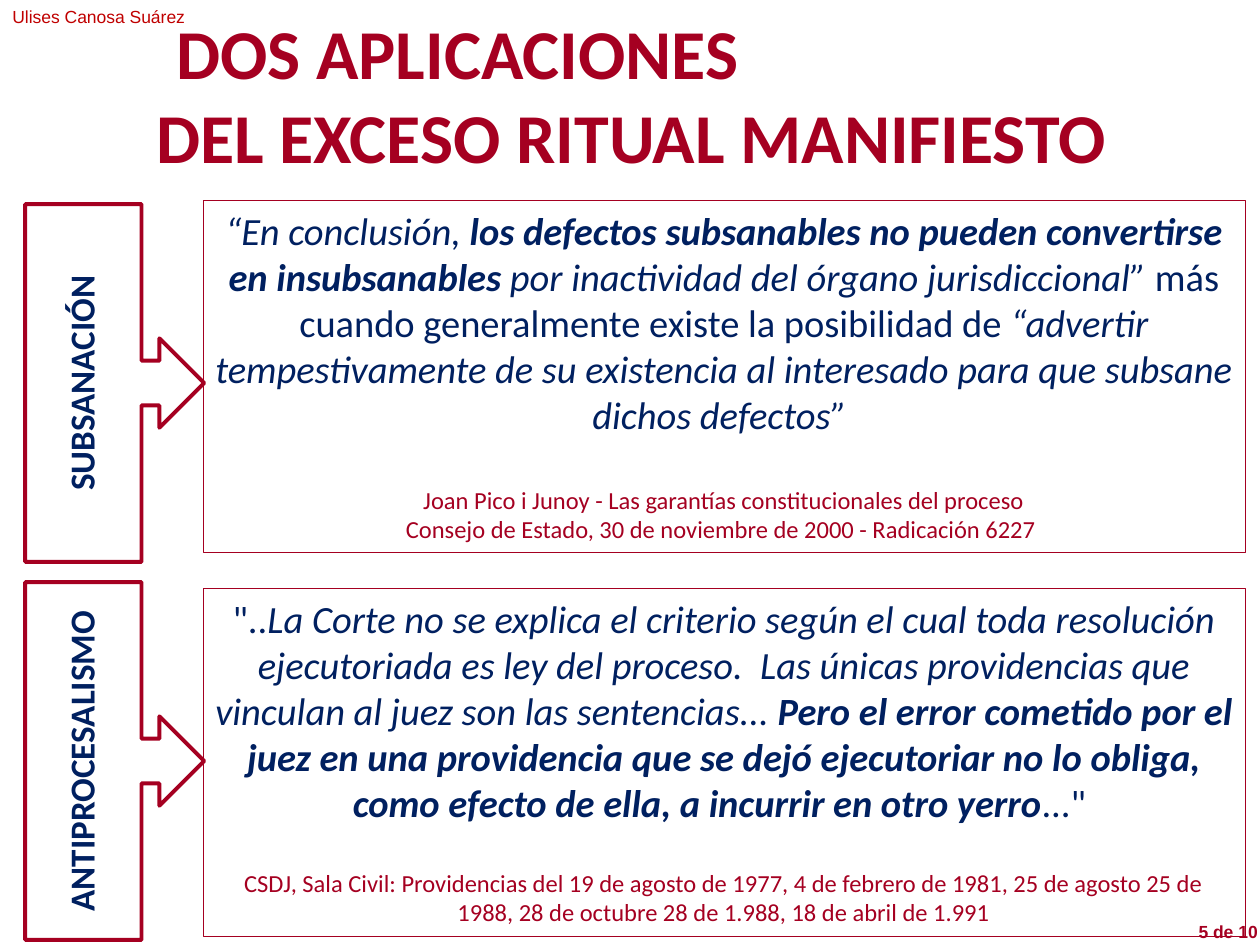
from pptx import Presentation
from pptx.dml.color import RGBColor
from pptx.enum.shapes import MSO_SHAPE
from pptx.enum.text import MSO_ANCHOR, MSO_AUTO_SIZE, PP_ALIGN
from pptx.util import Inches, Pt

COLORS = {"garnet": "A50021", "red": "C00000", "navy": "002060"}

QUOTE = {"name": "Calibri", "size": Pt(22), "color": "navy"}
SOURCE = {"name": "Calibri", "size": Pt(14), "color": "garnet"}
LABEL = {"name": "Calibri", "size": Pt(20), "color": "navy", "bold": True}
TITLE = {"name": "Calibri", "size": Pt(40), "color": "garnet", "bold": True}
AUTHOR = {"name": "Arial", "size": Pt(10), "color": "red"}
PAGE = {"name": "Arial", "size": Pt(10), "color": "garnet", "bold": True}
ITALIC = {"italic": True}
STRONG = {"italic": True, "bold": True}

# Each section: label, centre of callout, top and height of panel,
# runs of the quotation, gap before the sources, sources
SECTIONS = [
    ("SUBSANACIÓN", 3.04, 1.59, 2.79, [
        ("“En conclusión, ", ITALIC),
        ("los defectos subsanables no pueden convertirse en insubsanables", STRONG),
        (" por inactividad del órgano jurisdiccional” ", ITALIC),
        ("más cuando generalmente existe la posibilidad de ", {}),
        ("“advertir tempestivamente de su existencia al interesado para que "
         "subsane dichos defectos” ", ITALIC),
    ], Pt(27), [
        "Joan Pico i Junoy - Las garantías constitucionales del proceso",
        "Consejo de Estado, 30 de noviembre de 2000 - Radicación 6227 ",
    ]),
    ("ANTIPROCESALISMO", 6.04, 4.67, 2.76, [
        ("\"..", {}),
        ("La Corte no se explica el criterio según el cual toda resolución ejecutoriada "
         "es ley del proceso.  Las únicas providencias que vinculan al juez son las "
         "sentencias... ", ITALIC),
        ("Pero el error cometido por el juez en una providencia que se dejó ejecutoriar "
         "no lo obliga, como efecto de ella, a incurrir en otro yerro", STRONG),
        ("...\" ", {}),
    ], Pt(24), [
        "CSDJ, Sala Civil: Providencias del 19 de agosto de 1977, 4 de febrero de 1981, "
        "25 de agosto 25 de 1988, 28 de octubre 28 de 1.988, 18 de abril de 1.991",
    ]),
]


def rgb(color):
    return RGBColor.from_string(COLORS[color])


def format_font(font, values):
    for name, value in values.items():
        if name == "color":
            font.color.rgb = rgb(value)
        else:
            setattr(font, name, value)


def add_run(paragraph, text, values):
    run = paragraph.add_run()
    run.text = text
    format_font(run.font, values)


def add_text(slide, box, text, values, alignment=PP_ALIGN.LEFT):
    shape = slide.shapes.add_textbox(*map(Inches, box))
    frame = shape.text_frame
    frame.word_wrap = True
    frame.vertical_anchor = MSO_ANCHOR.MIDDLE
    paragraph = frame.paragraphs[0]
    paragraph.alignment = alignment
    add_run(paragraph, text, values)
    return shape


def add_outline(slide, kind, box, line_width):
    """Add an unfilled shape with a garnet outline."""
    shape = slide.shapes.add_shape(kind, *map(Inches, box))
    shape.shadow.inherit = False
    shape.fill.background()
    shape.line.color.rgb = rgb("garnet")
    shape.line.width = line_width
    return shape


def place_title(slide, box):
    title = slide.shapes.title
    title.left, title.top, title.width, title.height = map(Inches, box)
    frame = title.text_frame
    frame.auto_size = MSO_AUTO_SIZE.NONE
    frame.vertical_anchor = MSO_ANCHOR.MIDDLE
    frame.text = "DOS APLICACIONES\vDEL EXCESO RITUAL MANIFIESTO"
    paragraph = frame.paragraphs[0]
    paragraph.alignment = PP_ALIGN.LEFT
    properties = paragraph._p.get_or_add_pPr()
    properties.set("marL", str(Inches(0.22)))
    properties.set("indent", str(Inches(0.16)))
    for run in paragraph.runs:
        format_font(run.font, TITLE)


def add_callout(slide, label, center_x, center_y):
    """Add a callout turned to point right, with its label read upwards."""
    width, height = 2.84, 1.42
    box = (center_x - width / 2, center_y - height / 2, width, height)
    callout = add_outline(slide, MSO_SHAPE.DOWN_ARROW_CALLOUT, box, Pt(2.25))
    for index, value in enumerate((0.25, 0.25, 0.25, 0.65)):
        callout.adjustments[index] = value
    width, height = 2.59, 0.3
    box = (center_x - 0.27 - width / 2, center_y - height / 2, width, height)
    text = add_text(slide, box, label, LABEL, PP_ALIGN.CENTER)
    for shape in (callout, text):
        shape.rotation = 270


def add_panel(slide, box, quote, gap, sources):
    panel = add_outline(slide, MSO_SHAPE.RECTANGLE, box, Pt(0.25))
    frame = panel.text_frame
    frame.word_wrap = True
    frame.vertical_anchor = MSO_ANCHOR.TOP
    for text, style in quote:
        add_run(frame.paragraphs[0], text, {**QUOTE, **style})
    for source in sources:
        add_run(frame.add_paragraph(), source, SOURCE)
    frame.paragraphs[1].space_before = gap
    for paragraph in frame.paragraphs:
        paragraph.alignment = PP_ALIGN.CENTER


def main():
    presentation = Presentation()
    presentation.slide_width = Inches(10)
    presentation.slide_height = Inches(7.5)
    slide = presentation.slides.add_slide(presentation.slide_layouts[5])
    add_text(slide, (0, 0, 2.95, 0.27), "Ulises Canosa Suárez", AUTHOR)
    place_title(slide, (0.92, 0.02, 8.18, 1.45))
    for label, center_y, top, height, quote, gap, sources in SECTIONS:
        add_panel(slide, (1.61, top, 8.27, height), quote, gap, sources)
        add_callout(slide, label, 0.91, center_y)
    add_text(slide, (9.1, 7.26, 0.98, 0.27), "5 de 10", PAGE, PP_ALIGN.RIGHT)
    presentation.save("out.pptx")


if __name__ == "__main__":
    main()
